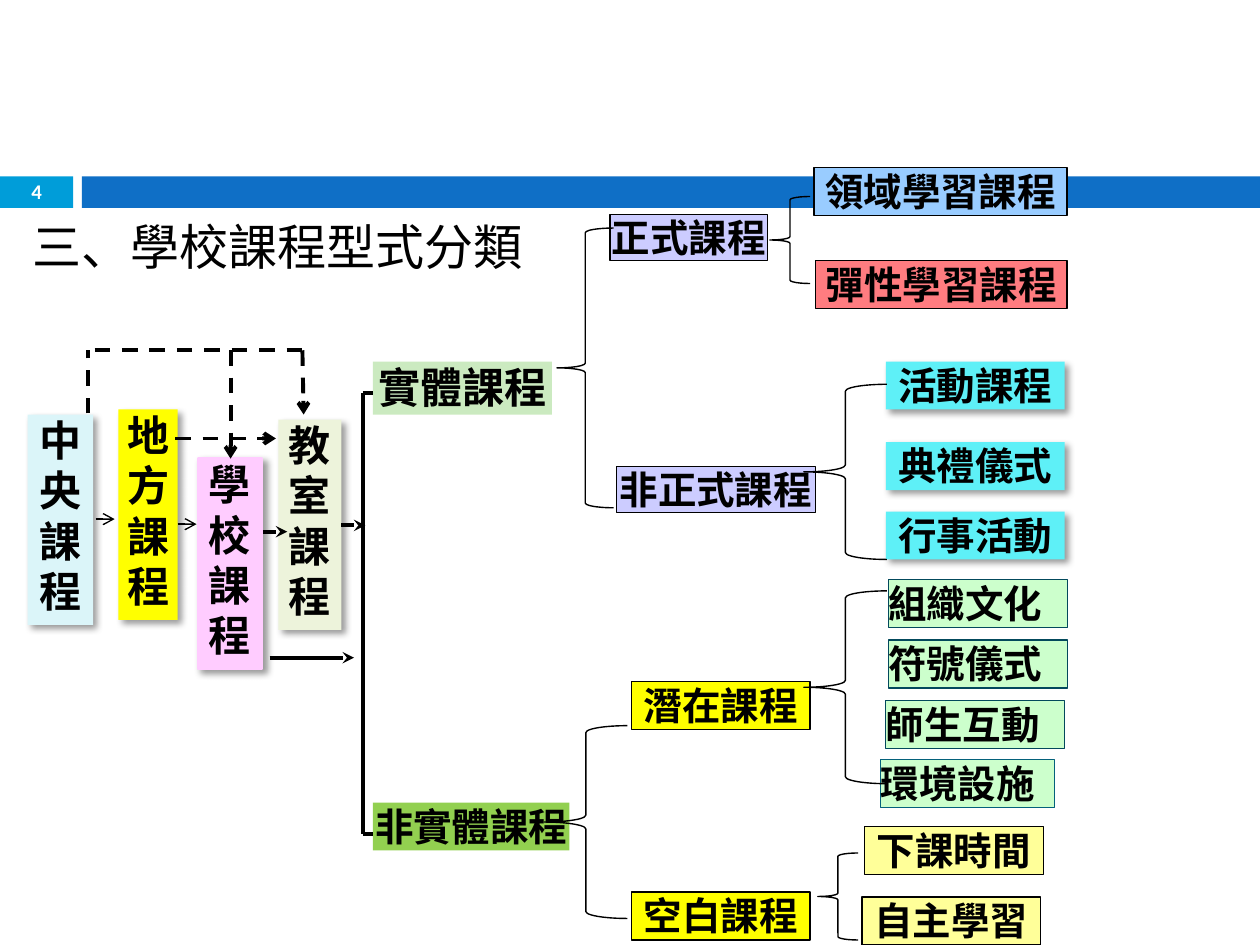
from lxml import etree
from pptx import Presentation
from pptx.dml.color import RGBColor
from pptx.enum.dml import MSO_LINE
from pptx.enum.shapes import MSO_CONNECTOR, MSO_SHAPE
from pptx.enum.text import MSO_ANCHOR, MSO_AUTO_SIZE, PP_ALIGN
from pptx.oxml.ns import qn
from pptx.util import Inches, Pt

RECT, BRACE = MSO_SHAPE.RECTANGLE, MSO_SHAPE.LEFT_BRACE
LEFT, CENTER = PP_ALIGN.LEFT, PP_ALIGN.CENTER
TOP, MIDDLE = MSO_ANCHOR.TOP, MSO_ANCHOR.MIDDLE
STRAIGHT, DASH = MSO_CONNECTOR.STRAIGHT, MSO_LINE.DASH
GROW = MSO_AUTO_SIZE.SHAPE_TO_FIT_TEXT
TITLE_ONLY = 5

COLORS = {name: RGBColor.from_string(value) for name, value in {
    "black": "000000", "white": "FFFFFF", "number": "009DD9", "band": "0F6FC6",
    "tangible": "CBEAC0", "intangible": "92D050", "yellow": "FFFF00",
    "pink": "FFCCFF", "cream": "EDF3DB", "ice": "DBF5F9", "cyan": "5EF0F7",
    "lavender": "CCCCFF", "mint": "CCFFCC", "navy": "03495C", "teal": "04617B",
    "sky": "99CCFF", "coral": "FF7C80", "lemon": "FFFF99",
}.items()}

prs = Presentation()
prs.slide_width, prs.slide_height = Inches(10), Inches(7.5)
CELL = prs.slide_width / 100  # the slide is a grid of 100 columns by 75 rows
slide = prs.slides.add_slide(prs.slide_layouts[TITLE_ONLY])


def add_box(col, row, cols, rows, fill, text="", size=22, font="DejaVu Sans",
            border=None, border_width=0.75, align=CENTER, anchor=TOP,
            bottom=0.01, shadow=False):
    """Add a filled rectangle, placed in grid cells, with bold text."""
    box = slide.shapes.add_shape(RECT, *(round(n * CELL) for n in (col, row, cols, rows)))
    box.fill.solid()
    box.fill.fore_color.rgb = COLORS[fill]
    if border:
        box.line.color.rgb = COLORS[border]
        box.line.width = Pt(border_width)
    else:
        box.line.fill.background()
    box.shadow.inherit = False
    if shadow:
        effects = box._element.spPr.find(qn("a:effectLst"))
        outer = etree.SubElement(effects, qn("a:outerShdw"), blurRad=str(Pt(4)),
                                 dist=str(Pt(3)), dir=str(45 * 60000), rotWithShape="0")
        shade = etree.SubElement(outer, qn("a:srgbClr"), val=str(COLORS["black"]))
        etree.SubElement(shade, qn("a:alpha"), val="40000")
    if not text:
        return box
    frame = box.text_frame
    frame.margin_left = frame.margin_right = frame.margin_top = 0
    frame.margin_bottom = Inches(bottom)
    frame.word_wrap = True
    frame.auto_size = GROW
    frame.vertical_anchor = anchor
    label = frame.paragraphs[0]
    label.text = text
    label.alignment = align
    label.font.name, label.font.size, label.font.bold = font, Pt(size), True
    label.font.color.rgb = COLORS["black"]
    return box


def add_line(start_col, start_row, end_col, end_row, width=2.25, dash=None, head=None):
    ends = (round(n * CELL) for n in (start_col, start_row, end_col, end_row))
    line = slide.shapes.add_connector(STRAIGHT, *ends)
    line.line.color.rgb = COLORS["black"]
    line.line.width = Pt(width)
    if dash:
        line.line.dash_style = dash
    properties = line._element.spPr
    if head:
        etree.SubElement(properties.find(qn("a:ln")), qn("a:tailEnd"), type=head)
    etree.SubElement(properties, qn("a:effectLst"))


# Header band, page number and title
page_number = add_box(0, 14, 5.8, 2.5, "number", "4", size=11.9, font="Calibri", anchor=MIDDLE)
page_number.text_frame.auto_size = MSO_AUTO_SIZE.NONE
page_number.text_frame.paragraphs[0].font.color.rgb = COLORS["white"]
add_box(6.5, 14, 93.5, 2.5, "band")

title = slide.shapes.title
title.left, title.top, title.width, title.height = (
    round(n * CELL) for n in (1.6, 16.7, 41.3, 5.7))
title_frame = title.text_frame
title_frame.word_wrap = False
title_frame.auto_size = GROW
title_frame.vertical_anchor = TOP
heading = title_frame.paragraphs[0]
heading.text = "三、學校課程型式分類"
heading.alignment = LEFT
heading.font.name, heading.font.size = "Calibri", Pt(28)
heading.font.color.rgb = COLORS["black"]

# Curriculum levels, one character to a line
for text, col, row, cols, fill, border in (
    ("地方課程", 9.4, 32.5, 4.7, "yellow", None),
    ("學校課程", 15.7, 36.4, 5.1, "pink", "pink"),
    ("教室課程", 22.1, 33.3, 5, "cream", None),
    ("中央課程", 2.2, 32.9, 5.2, "ice", None),
):
    add_box(col, row, cols, 16.7, fill, text, size=24, font="Arial",
            border=border, border_width=1.5, bottom=0.05, shadow=True)

# Two main branches
add_box(29.6, 28.7, 14.2, 4.2, "tangible", "實體課程", size=24, font="Arial")
add_box(29.6, 63.7, 15.6, 3.8, "intangible", "非實體課程", font="Arial")

# Curriculum types and their members
for text, col, row, cols, fill in (
    ("非正式課程", 48.9, 37, 15.8, "lavender"),
    ("正式課程", 48.4, 17, 12.5, "lavender"),
    ("空白課程", 50.1, 70.8, 14.2, "yellow"),
    ("潛在課程", 50.1, 54.1, 14.2, "yellow"),
    ("領域學習課程", 64.6, 13.3, 20.1, "sky"),
    ("彈性學習課程", 64.7, 20.7, 20, "coral"),
    ("自主學習", 68.4, 71.2, 14.2, "lemon"),
    ("下課時間", 68.6, 65.6, 14.2, "lemon"),
):
    is_type = fill == "lavender"
    add_box(col, row, cols, 3.7 if is_type else 3.8, fill, text,
            border="black", bottom=0 if is_type else 0.01)

for text, row in (("活動課程", 28.7), ("典禮儀式", 35.1), ("行事活動", 40.6)):
    add_box(70.3, row, 14.2, 3.8, "cyan", text, shadow=True)

for text, col, row, cols, border in (
    ("組織文化", 70.5, 46, 14.2, "navy"),
    ("符號儀式", 70.5, 50.8, 14.2, "navy"),
    ("師生互動", 70.3, 55.6, 14.2, "navy"),
    ("環境設施", 69.9, 60.3, 13.8, "teal"),
):
    add_box(col, row, cols, 3.8, "mint", text, border=border, align=LEFT)

# Braces from each branch to its parts
for cells in (
    (44.2, 18.1, 4.5, 22.2), (61.1, 15.6, 3.2, 6.9), (63.8, 30.5, 6.6, 13.9),
    (63.8, 46.9, 6.6, 15.3), (43.2, 57.6, 6.6, 15.3), (64.9, 67.7, 3.2, 6.9),
):
    brace = slide.shapes.add_shape(BRACE, *(round(n * CELL) for n in cells))
    brace.fill.background()
    brace.line.color.rgb = COLORS["black"]
    brace.line.width = Pt(0.79)
    brace.shadow.inherit = False

# Square bracket joining the two main branches
add_line(28.8, 31.2, 28.8, 66.2)
for row in (31.2, 66.2):
    add_line(28.8, row, 29.6, row)

# Steps between neighbouring levels
for start, end, row in ((7.6, 9.1, 41.2), (14.1, 15.6, 41.6)):
    add_line(start, row, end, row, width=0.79, head="arrow")
for start, end, row in ((27.1, 29, 41.7), (20.9, 22.8, 42.2), (21.4, 28.1, 52.2)):
    add_line(start, row, end, row, head="stealth")

# Dashed links that skip a level
for *ends, head in (
    (7, 32.8, 7, 27.8, None), (7.5, 27.8, 24, 27.8, None),
    (13.9, 34.8, 21.9, 34.8, "arrow"), (18.3, 27.8, 18.3, 36.4, "arrow"),
    (24, 27.8, 24.1, 32.9, "arrow"),
):
    add_line(*ends, dash=DASH, head=head)

prs.save("out.pptx")
